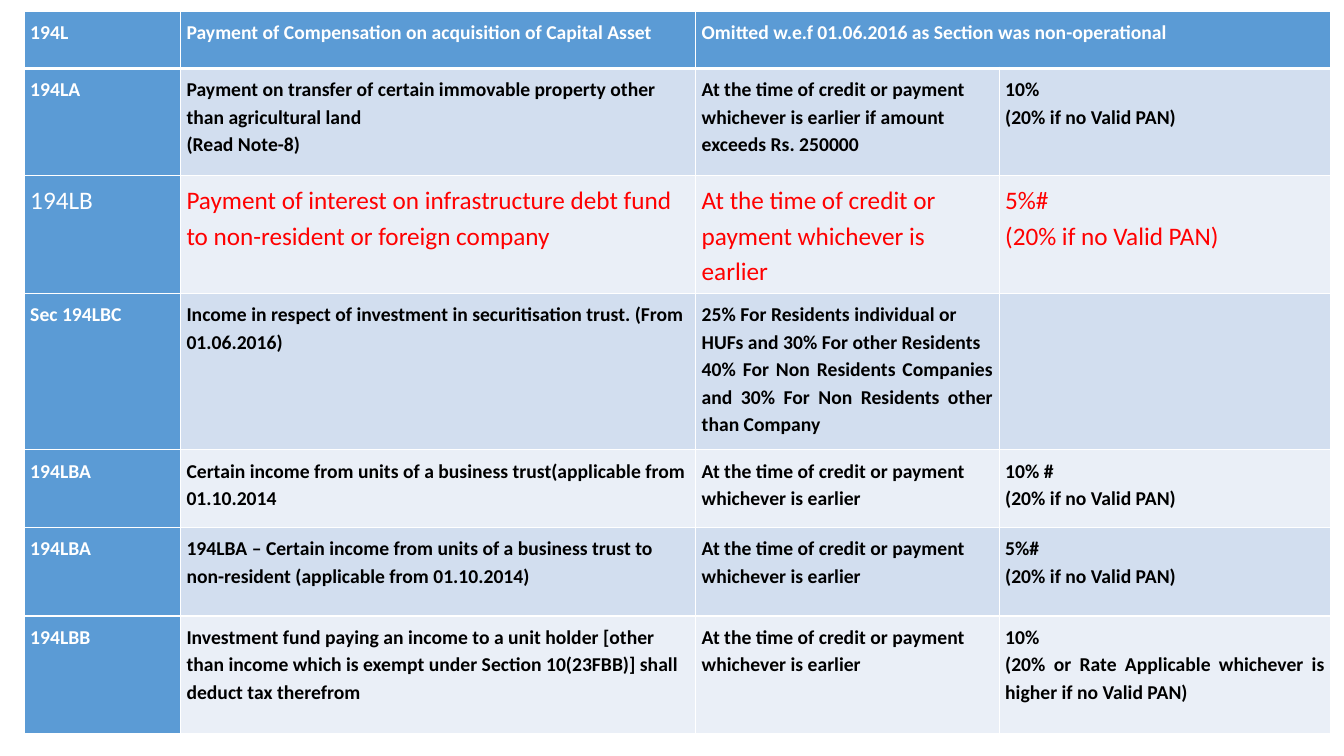
from dataclasses import dataclass

from lxml.etree import SubElement
from pptx import Presentation
from pptx.dml.color import RGBColor
from pptx.enum.text import PP_ALIGN as Align
from pptx.oxml.ns import qn
from pptx.table import _Cell as Cell
from pptx.util import Inches, Pt

COLORS = {
    "section": "5B9BD5",
    "dark_band": "D2DEEF",
    "light_band": "EAEFF7",
    "white": "FFFFFF",
    "black": "000000",
    "red": "FF0000",
}
FONT = "Calibri"
COLUMN_WIDTHS = (1.55, 5.11, 3.01, 3.29)
CELL_MARGIN = 0.06
THIN, THICK = 1, 3

ON_CREDIT = "At the time of credit or payment whichever is earlier"
NO_PAN = "(20% if no Valid PAN)"


@dataclass(frozen=True)
class TaxRow:
    """One table row; a line break in a text starts a justified paragraph."""
    height: float
    section: str
    payment: str
    timing: str
    rate: str = ""
    size: int = 14
    bold: bool = True
    color: str = "black"


ROWS = (
    TaxRow(0.57, "194L", "Payment of Compensation on acquisition of Capital Asset",
           "Omitted w.e.f 01.06.2016 as Section was non-operational", color="white"),
    TaxRow(1.06, "194LA",
           "Payment on transfer of certain immovable property other than agricultural land\n"
           "(Read Note-8)",
           f"{ON_CREDIT} if amount exceeds Rs. 250000", f"10%\n{NO_PAN}"),
    TaxRow(0.92, "194LB",
           "Payment of interest on infrastructure debt fund to non-resident or foreign company",
           ON_CREDIT, f"5%#\n{NO_PAN}", size=18, bold=False, color="red"),
    TaxRow(1.55, "Sec 194LBC",
           "Income in respect of investment in securitisation trust. (From 01.06.2016)",
           "25% For Residents individual or HUFs and 30% For other Residents\n"
           "40% For Non Residents Companies and 30% For Non Residents other than Company"),
    TaxRow(0.77, "194LBA",
           "Certain income from units of a business trust(applicable from 01.10.2014",
           ON_CREDIT, f"10% #\n{NO_PAN}"),
    TaxRow(0.88, "194LBA",
           "194LBA – Certain income from units of a business trust to non-resident "
           "(applicable from 01.10.2014)",
           ON_CREDIT, f"5%#\n{NO_PAN}"),
    TaxRow(1.17, "194LBB",
           "Investment fund paying an income to a unit holder [other than income which is "
           "exempt under Section 10(23FBB)] shall deduct tax therefrom",
           ON_CREDIT,
           "10%\n(20% or Rate Applicable whichever is higher if no Valid PAN)"),
)


def rgb(name: str) -> RGBColor:
    return RGBColor.from_string(COLORS[name])


def set_borders(cell: Cell, top: int, bottom: int) -> None:
    """Draw white borders; must run before the fill, which follows them in the XML."""
    properties = cell._tc.get_or_add_tcPr()
    for side, width in (("L", THIN), ("R", THIN), ("T", top), ("B", bottom)):
        line = SubElement(properties, qn(f"a:ln{side}"), w=str(Pt(width)))
        fill = SubElement(line, qn("a:solidFill"))
        SubElement(fill, qn("a:srgbClr"), val=COLORS["white"])


def write_text(cell: Cell, text: str, row: TaxRow, color: str) -> None:
    cell.text = text.replace("\v", "\n")
    for index, paragraph in enumerate(cell.text_frame.paragraphs):
        paragraph.alignment = Align.JUSTIFY if index else Align.LEFT
        paragraph.line_spacing = 1.15
        font = paragraph.font
        font.name = FONT
        font.size = Pt(row.size)
        font.bold = row.bold
        font.color.rgb = rgb(color)


def format_cell(cell: Cell, row_index: int, fill: str) -> None:
    set_borders(cell, THICK if row_index == 1 else THIN, THICK if row_index == 0 else THIN)
    cell.fill.solid()
    cell.fill.fore_color.rgb = rgb(fill)
    cell.margin_left = cell.margin_right = Inches(CELL_MARGIN)
    cell.margin_top = cell.margin_bottom = Inches(CELL_MARGIN)


def main() -> None:
    presentation = Presentation()
    presentation.slide_width = Inches(13.33)
    presentation.slide_height = Inches(7.5)
    slide = presentation.slides.add_slide(presentation.slide_layouts[6])

    table = slide.shapes.add_table(
        len(ROWS), len(COLUMN_WIDTHS), Inches(0.24), Inches(0.11),
        Inches(sum(COLUMN_WIDTHS)), Inches(sum(row.height for row in ROWS))).table
    for column, width in zip(table.columns, COLUMN_WIDTHS):
        column.width = Inches(width)

    for row_index, row in enumerate(ROWS):
        table.rows[row_index].height = Inches(row.height)
        band = "dark_band" if row_index % 2 else "light_band"
        for column_index, text in enumerate((row.section, row.payment, row.timing, row.rate)):
            in_section = row_index == 0 or column_index == 0
            cell = table.cell(row_index, column_index)
            format_cell(cell, row_index, "section" if in_section else band)
            if text:
                write_text(cell, text, row, "white" if in_section else row.color)
    table.cell(0, 2).merge(table.cell(0, 3))

    presentation.save("out.pptx")


if __name__ == "__main__":
    main()
